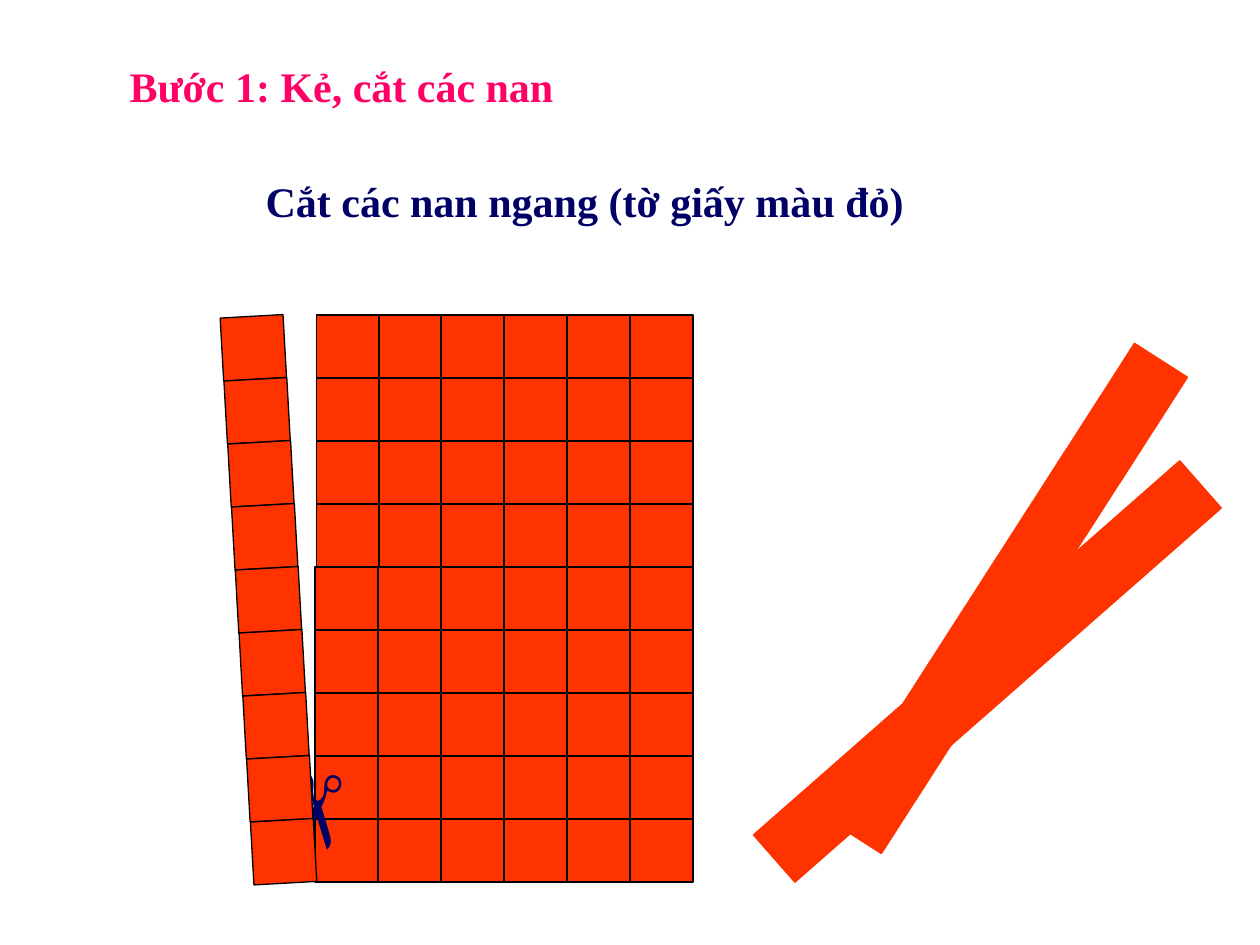
from pptx import Presentation
from pptx.dml.color import RGBColor
from pptx.enum.shapes import MSO_SHAPE as Shape
from pptx.enum.text import MSO_ANCHOR as Anchor, MSO_AUTO_SIZE as AutoSize
from pptx.util import Inches, Pt

RED, BLACK, PINK, NAVY = "FF3300", "000000", "FF0066", "000066"
CELL = 0.5
ROWS, COLUMNS = 9, 6


def add_cell(shapes, left, top, outline=BLACK, angle=0):
    cell = shapes.add_shape(Shape.RECTANGLE, Inches(left), Inches(top),
                            Inches(CELL), Inches(CELL))
    cell.rotation = angle
    cell.shadow.inherit = False
    cell.fill.solid()
    cell.fill.fore_color.rgb = RGBColor.from_string(RED)
    cell.line.color.rgb = RGBColor.from_string(outline)
    cell.line.width = Pt(0.75)


def add_label(box, text, size, font, color, wrap=True):
    label = slide.shapes.add_textbox(*(Inches(value) for value in box))
    frame = label.text_frame
    frame.word_wrap = wrap
    frame.auto_size = AutoSize.SHAPE_TO_FIT_TEXT
    line = frame.paragraphs[0]
    line.text = text
    line.font.size = Pt(size)
    line.font.name = font
    line.font.bold = True
    line.font.color.rgb = RGBColor.from_string(color)
    return label


prs = Presentation()
prs.slide_width, prs.slide_height = Inches(10), Inches(7.5)
slide = prs.slides.add_slide(prs.slide_layouts[6])

# Sheet of squares; the upper four of the left column sit slightly to the right
for row in range(ROWS):
    for column in reversed(range(COLUMNS)):
        nudge = 0.01 if column == 0 and row < 4 else 0
        add_cell(slide.shapes, 2.5 + CELL * column + nudge, 2.5 + CELL * row)

# Strips: first cell, step to the next cell, angle, outline
steep_strip = (8.83, 2.82, -0.27, 0.42, 32.6, RED)
cut_strip = (1.76, 2.51, 0.03, 0.5, 86.8, BLACK)
flat_strip = (9.09, 3.76, -0.376, 0.33, 48.7, RED)

for strip in (steep_strip, cut_strip, flat_strip):
    left, top, step_x, step_y, angle, outline = strip
    if strip is cut_strip:
        # Scissors lie under the strip being cut
        scissors = add_label((1.97, 6.14, 1.15, 0.9), "✂", 48, "Calibri", NAVY, wrap=False)
        scissors.rotation = 94
        scissors.text_frame.vertical_anchor = Anchor.MIDDLE
    cells = slide.shapes.add_group_shape().shapes
    for i in range(ROWS):
        add_cell(cells, left + step_x * i, top + step_y * i, outline, angle)

# Headings
add_label((0.93, 0.43, 4.4, 0.5), "Bước 1: Kẻ, cắt các nan", 24, "Times New Roman", PINK)
add_label((2.01, 1.34, 6.07, 0.5), "Cắt các nan ngang (tờ giấy màu đỏ)", 24,
          "Times New Roman", NAVY)

prs.save("out.pptx")
